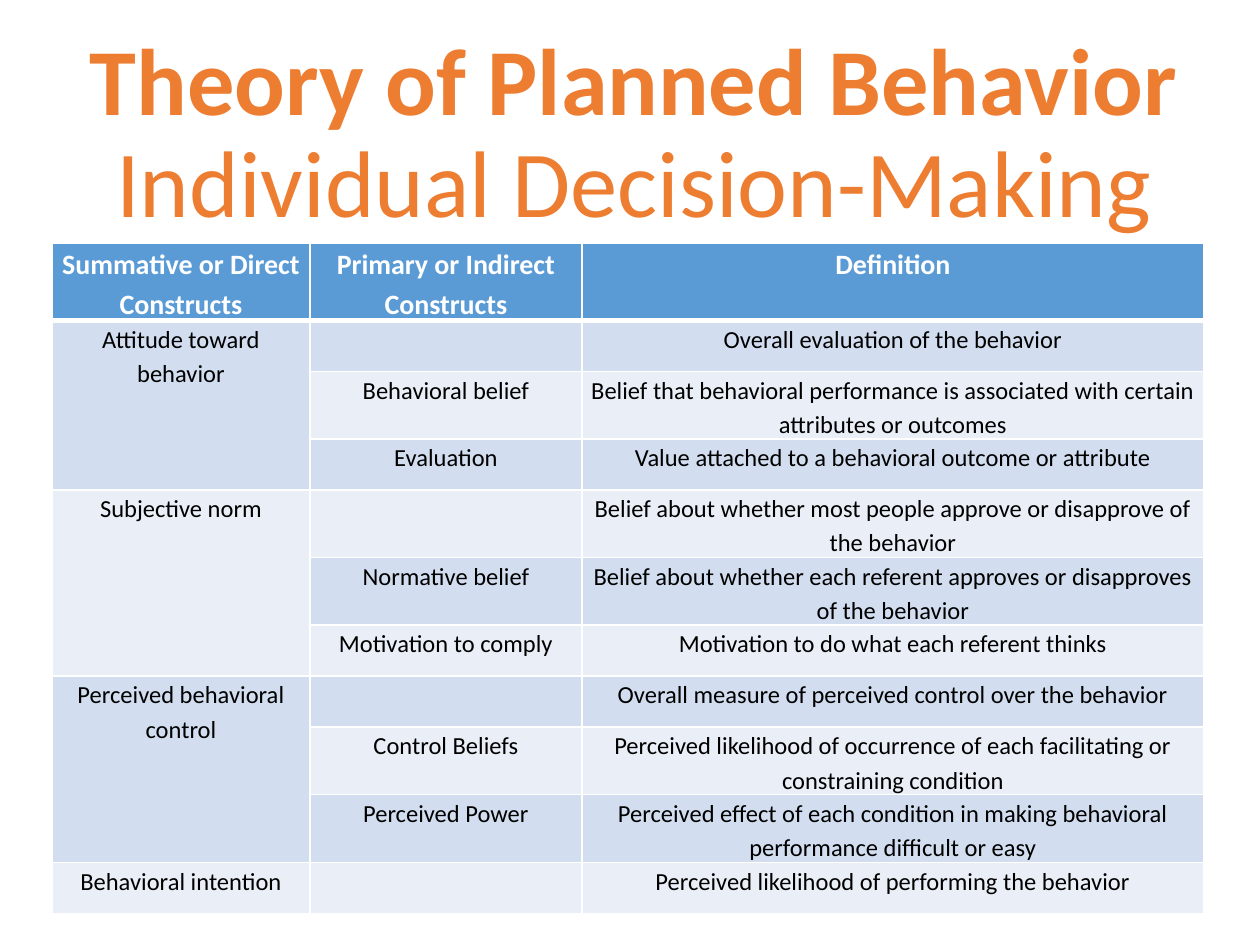
from lxml import etree
from pptx import Presentation
from pptx.dml.color import RGBColor
from pptx.enum.text import MSO_ANCHOR, PP_ALIGN
from pptx.oxml.ns import qn
from pptx.util import Pt

CENTER, TOP = PP_ALIGN.CENTER, MSO_ANCHOR.TOP
EMU_PER_PX = 914400 / 126
ORANGE = RGBColor(0xED, 0x7D, 0x31)
BLUE = RGBColor(0x5B, 0x9B, 0xD5)
DARK_BAND = RGBColor(0xD2, 0xDE, 0xEF)
LIGHT_BAND = RGBColor(0xEA, 0xEF, 0xF7)
WHITE = RGBColor(0xFF, 0xFF, 0xFF)
BLACK = RGBColor(0, 0, 0)

TITLE = [("Theory of Planned Behavior", True), ("Individual Decision-Making", False)]
HEADER = ("Summative or Direct Constructs", "Primary or Indirect Constructs", "Definition")
CONSTRUCTS = [
    ("Attitude toward behavior", [
        ("", "Overall evaluation of the behavior"),
        ("Behavioral belief", "Belief that behavioral performance is associated with "
         "certain attributes or outcomes"),
        ("Evaluation", "Value attached to a behavioral outcome or attribute"),
    ]),
    ("Subjective norm", [
        ("", "Belief about whether most people approve or disapprove of the behavior"),
        ("Normative belief", "Belief about whether each referent approves or disapproves "
         "of the behavior"),
        ("Motivation to comply", "Motivation to do what each referent thinks"),
    ]),
    ("Perceived behavioral control", [
        ("", "Overall measure of perceived control over the behavior"),
        ("Control Beliefs", "Perceived likelihood of occurrence of each facilitating or "
         "constraining condition"),
        ("Perceived Power", "Perceived effect of each condition in making behavioral "
         "performance difficult or easy"),
    ]),
    ("Behavioral intention", [("", "Perceived likelihood of performing the behavior")]),
]

TITLE_BOX = (63, 28, 1142, 198)
TABLE_LEFT, TABLE_TOP = 52, 243
COLUMN_WIDTHS = (258, 272, 622)
ROW_HEIGHT = 51

TITLE_FONT = {"name": "Calibri", "size": Pt(54)}
HEADER_FONT = {"name": "Calibri", "size": Pt(16), "bold": True}
BODY_FONT = {"name": "Calibri", "size": Pt(14), "bold": False}


def px(value):
    return round(value * EMU_PER_PX)


def set_font(font, formats, color):
    for name, value in formats.items():
        setattr(font, name, value)
    font.color.rgb = color


def add_borders(cell, bottom_width):
    """Draw white cell edges; they must precede the fill in the cell XML."""
    properties = cell._tc.get_or_add_tcPr()
    for side, width in (("L", 1), ("R", 1), ("T", 1), ("B", bottom_width)):
        line = etree.SubElement(properties, qn("a:ln" + side), w=str(Pt(width)))
        fill = etree.SubElement(line, qn("a:solidFill"))
        etree.SubElement(fill, qn("a:srgbClr"), val=str(WHITE))


def format_cell(cell, text, fill, formats, color, bottom_width=1):
    add_borders(cell, bottom_width)
    cell.fill.solid()
    cell.fill.fore_color.rgb = fill
    cell.margin_left = cell.margin_right = px(6)
    cell.margin_top = cell.margin_bottom = 0
    para = cell.text_frame.paragraphs[0]
    para.alignment, para.line_spacing = CENTER, 1.15
    set_font(para.font, formats, color)
    if text:
        span = para.add_run()
        span.text = text
        set_font(span.font, formats, color)


def add_title(page):
    frame = page.shapes.add_textbox(*map(px, TITLE_BOX)).text_frame
    frame.word_wrap = True
    frame.vertical_anchor = TOP
    para = frame.paragraphs[0]
    para.alignment, para.line_spacing = CENTER, 0.9
    for index, (text, bold) in enumerate(TITLE):
        if index:
            para.add_line_break()
        span = para.add_run()
        span.text = text
        set_font(span.font, {**TITLE_FONT, "bold": bold}, ORANGE)


def add_construct_table(page):
    rows = [(construct if index == 0 else "", *entry)
            for construct, entries in CONSTRUCTS
            for index, entry in enumerate(entries)]
    row_count = len(rows) + 1
    table = page.shapes.add_table(
        row_count, len(HEADER), px(TABLE_LEFT), px(TABLE_TOP),
        px(sum(COLUMN_WIDTHS)), px(ROW_HEIGHT * row_count)).table
    for column, width in zip(table.columns, COLUMN_WIDTHS):
        column.width = px(width)
    for row in table.rows:
        row.height = px(ROW_HEIGHT)
    for column, text in enumerate(HEADER):
        format_cell(table.cell(0, column), text, BLUE, HEADER_FONT, WHITE, bottom_width=3)
    for number, texts in enumerate(rows, 1):
        band = DARK_BAND if number % 2 else LIGHT_BAND
        for column, text in enumerate(texts):
            format_cell(table.cell(number, column), text, band, BODY_FONT, BLACK)
    first = 1
    for _, entries in CONSTRUCTS:
        last = first + len(entries) - 1
        if last > first:
            table.cell(first, 0).merge(table.cell(last, 0))
        first = last + 1


def main():
    deck = Presentation()
    deck.slide_width, deck.slide_height = px(1260), px(945)
    page = deck.slides.add_slide(deck.slide_layouts[6])
    add_title(page)
    add_construct_table(page)
    deck.save("out.pptx")


if __name__ == "__main__":
    main()
